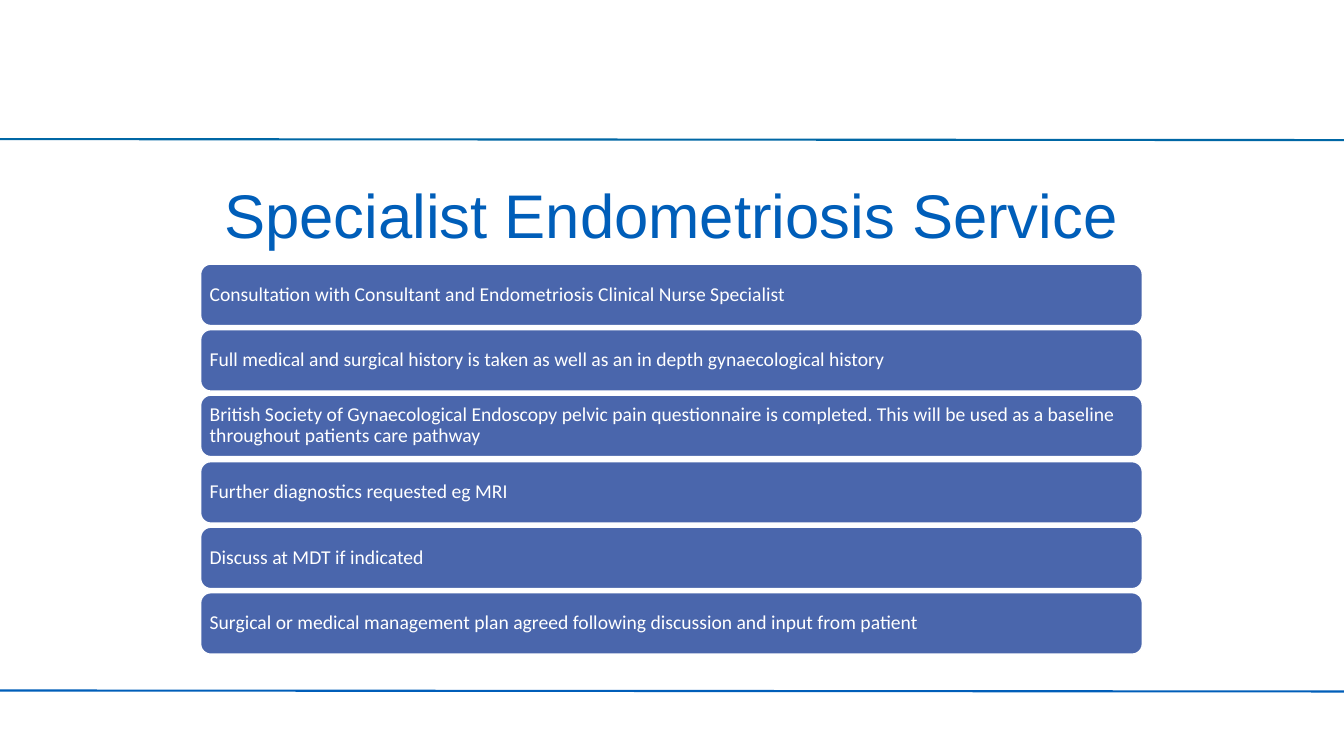
from dataclasses import dataclass

from lxml.etree import SubElement
from pptx import Presentation
from pptx.dml.color import RGBColor
from pptx.enum.shapes import MSO_CONNECTOR, MSO_SHAPE
from pptx.enum.text import MSO_ANCHOR, MSO_AUTO_SIZE, PP_ALIGN
from pptx.oxml.ns import qn
from pptx.slide import Slide
from pptx.text.text import _Paragraph as Paragraph
from pptx.util import Emu, Pt

PX = 9144  # 100 px to the inch
WIDTH, HEIGHT = 1333, 750
LEFT, CONTENT_WIDTH = 199, 934
BARS_TOP, LAST_BAR_TOP, BAR_HEIGHT = 262, 588, 61
COLORS = {"title": "005EB9", "top_rule": "0067A5", "bottom_rule": "005EB9",
          "bar": "4A66AC", "white": "FFFFFF"}


@dataclass
class Rule:
    start_y: int
    end_y: int
    color: str


RULES = [Rule(138, 139, "top_rule"), Rule(685, 686, "bottom_rule")]
STEPS = [
    "Consultation with Consultant and Endometriosis Clinical Nurse Specialist",
    "Full medical and surgical history is taken as well as an in depth gynaecological history",
    "British Society of Gynaecological Endoscopy pelvic pain questionnaire is completed. "
    "This will be used as a baseline throughout patients care pathway",
    "Further diagnostics requested eg MRI",
    "Discuss at MDT if indicated",
    "Surgical or medical management plan agreed following discussion and input from patient",
]


def px(n: int) -> Emu:
    return Emu(n * PX)


def rgb(name: str) -> RGBColor:
    return RGBColor.from_string(COLORS[name])


def format_paragraph(p: Paragraph, font: str, size: int, color: str, align: PP_ALIGN) -> None:
    p.alignment = align
    p.line_spacing = 0.9
    for r in p.runs:
        r.font.name = font
        r.font.size = Pt(size)
        r.font.color.rgb = rgb(color)


def add_rule(s: Slide, rule: Rule) -> None:
    line = s.shapes.add_connector(MSO_CONNECTOR.STRAIGHT, 0, px(rule.start_y),
                                  px(WIDTH), px(rule.end_y))
    line.line.color.rgb = rgb(rule.color)
    line.line.width = Pt(1.5)
    SubElement(line.element.spPr, qn("a:effectLst"))


def set_title(s: Slide, text: str) -> None:
    title = s.shapes.title
    title.left, title.top = px(LEFT), px(177)
    title.width, title.height = px(CONTENT_WIDTH), px(80)
    tf = title.text_frame
    tf.text = text
    tf.auto_size = MSO_AUTO_SIZE.NONE
    tf.vertical_anchor = MSO_ANCHOR.MIDDLE
    format_paragraph(tf.paragraphs[0], "Arial", 44, "title", PP_ALIGN.CENTER)


def add_bar(s: Slide, top: int, text: str) -> None:
    bar = s.shapes.add_shape(MSO_SHAPE.ROUNDED_RECTANGLE, px(LEFT), px(top),
                             px(CONTENT_WIDTH), px(BAR_HEIGHT))
    bar.shadow.inherit = False
    bar.fill.solid()
    bar.fill.fore_color.rgb = rgb("bar")
    bar.line.color.rgb = rgb("white")
    bar.line.width = Pt(1)
    tf = bar.text_frame
    tf.text = text
    tf.word_wrap = True
    tf.vertical_anchor = MSO_ANCHOR.MIDDLE
    tf.margin_left = tf.margin_right = tf.margin_top = tf.margin_bottom = px(6)
    format_paragraph(tf.paragraphs[0], "Calibri", 14, "white", PP_ALIGN.LEFT)


def main() -> None:
    prs = Presentation()
    prs.slide_width, prs.slide_height = px(WIDTH), px(HEIGHT)
    s = prs.slides.add_slide(prs.slide_layouts.get_by_name("Title Only"))
    for rule in RULES:
        add_rule(s, rule)
    set_title(s, "Specialist Endometriosis Service")
    pitch = (LAST_BAR_TOP - BARS_TOP) / (len(STEPS) - 1)
    for i, step in enumerate(STEPS):
        add_bar(s, round(BARS_TOP + i * pitch), step)
    prs.save("out.pptx")


if __name__ == "__main__":
    main()
